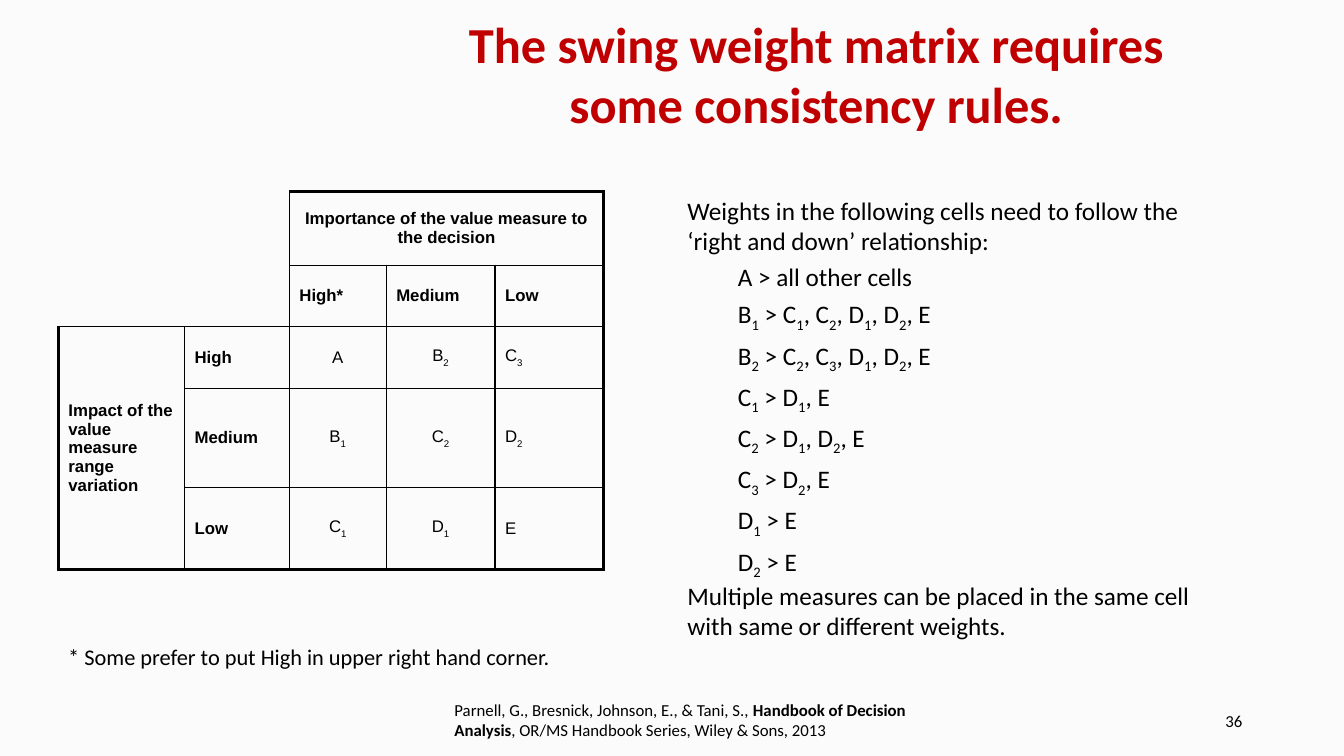
from dataclasses import dataclass

from lxml import etree
from pptx import Presentation, util as u
from pptx.dml.color import RGBColor
from pptx.enum import text as t
from pptx.oxml import ns

LEFT, MID, RIGHT = t.PP_ALIGN.LEFT, t.PP_ALIGN.CENTER, t.PP_ALIGN.RIGHT
TOP, CORE, BASE = t.MSO_ANCHOR.TOP, t.MSO_ANCHOR.MIDDLE, t.MSO_ANCHOR.BOTTOM


@dataclass(frozen=True)
class Theme:
    back: str = "FBFBFB"
    ink: str = "000000"
    red: str = "C00000"
    font: str = "Calibri"
    grid: str = "Arial"
    head: float = 36
    body: float = 18
    note: float = 16
    small: float = 12
    thin: float = 1
    thick: float = 2.25


THEME = Theme()


@dataclass(frozen=True)
class Box:
    left: float
    top: float
    width: float
    height: float
    lines: tuple[str, ...]
    size: float
    color: str = THEME.ink
    bold: bool = False
    align: t.PP_ALIGN = LEFT
    anchor: t.MSO_ANCHOR = TOP
    grow: bool = False
    wrap: bool = True
    foot: float = 0.13


RULES = (
    "Weights in the following cells need to follow the ‘right and down’ relationship:",
    "\tA > all other cells",
    "\tB_1 > C_1, C_2, D_1, D_2, E",
    "\tB_2 > C_2, C_3, D_1, D_2, E",
    "\tC_1 > D_1, E",
    "\tC_2 > D_1, D_2, E",
    "\tC_3 > D_2, E",
    "\tD_1 > E",
    "\tD_2 > E",
    "Multiple measures can be placed in the same cell with same or different weights.",
)

BOXES = (
    Box(23.93, 17.65, 7.62, 1.02, ("36",), THEME.small, align=RIGHT, anchor=CORE),
    Box(17.07, 5.18, 14.1, 11.48, RULES, THEME.body, anchor=CORE, grow=True, foot=0.9),
    Box(1.47, 16.08, 12.8, 0.94,
        ("* Some prefer to put High in upper right hand corner.",),
        THEME.note, grow=True, wrap=False),
    Box(11.07, 0.58, 19, 2.92,
        ("The swing weight matrix requires some consistency rules.",),
        THEME.head, THEME.red, True, MID, BASE),
    Box(11.2, 17.5, 12.9, 1.27,
        ("Parnell, G., Bresnick, Johnson, E., & Tani, S., "
         "**Handbook of Decision Analysis**, OR/MS Handbook Series, Wiley & Sons, 2013",),
        THEME.small, grow=True),
)

COLS = (3.18, 2.64, 2.44, 2.74, 2.74)
ROWS = (1.85, 1.55, 1.55, 2.51, 2.06)
CELLS = (
    ("", "", "Importance of the value measure to the decision", "", ""),
    ("", "", "High*", "Medium", "Low"),
    ("Impact of the value measure range variation", "High", "A", "B_2", "C_3"),
    ("", "Medium", "B_1", "C_2", "D_2"),
    ("", "Low", "C_1", "D_1", "E"),
)
SIDES = {"lnL": (0, -1), "lnR": (0, 1), "lnT": (-1, 0), "lnB": (1, 0)}


def write(para, line: str, size: float, name: str, color: str,
          bold: bool, sub: str = "-25000") -> None:
    """Fill a paragraph; _ lowers the next character, ** switches bold on and off."""
    for i, part in enumerate(line.split("**")):
        for j, bit in enumerate(part.split("_")):
            for k, piece in enumerate((bit[:1], bit[1:]) if j else (bit,)):
                if not piece:
                    continue
                run = para.add_run()
                run.text = piece
                if i % 2:
                    run.font.bold = True
                if j and k == 0:
                    run.font._element.set("baseline", sub)
    font = para.font
    font.size, font.name, font.bold = u.Pt(size), name, bold
    font.color.rgb = RGBColor.from_string(color)


def add_box(slide, box: Box) -> None:
    shape = slide.shapes.add_textbox(
        *map(u.Cm, (box.left, box.top, box.width, box.height)))
    frame = shape.text_frame
    frame.word_wrap = box.wrap
    frame.auto_size = (t.MSO_AUTO_SIZE.SHAPE_TO_FIT_TEXT if box.grow
                       else t.MSO_AUTO_SIZE.NONE)
    frame.vertical_anchor = box.anchor
    frame.margin_bottom = u.Cm(box.foot)
    for i, line in enumerate(box.lines):
        para = frame.add_paragraph() if i else frame.paragraphs[0]
        para.alignment = box.align
        if line.startswith("\t"):
            para.line_spacing = 1.2
        write(para, line, box.size, THEME.font, box.color, box.bold)


def zone(row: int, col: int):
    """Name the merged area, blank corner or single cell at a grid place."""
    if not (0 <= row < len(ROWS) and 0 <= col < len(COLS)):
        return "out"
    if row < 2 and col < 2:
        return "blank"
    if row == 0:
        return "top"
    return "side" if col == 0 else (row, col)


def weigh(row: int, col: int, down: int, right: int) -> float:
    """Line width on one side of a cell's zone, zero for none."""
    here = zone(row, col)
    next_to = zone(row + down, col + right)
    while here == next_to and here != "blank":
        row, col = row + down, col + right
        next_to = zone(row + down, col + right)
    if here == "blank" and next_to in ("blank", "out"):
        return 0
    return THEME.thick if next_to == "out" else THEME.thin


def add_edge(cell, tag: str, width: float) -> None:
    line = etree.SubElement(cell._tc.get_or_add_tcPr(), ns.qn(f"a:{tag}"))
    if not width:
        etree.SubElement(line, ns.qn("a:noFill"))
        return
    line.set("w", str(u.Pt(width)))
    fill = etree.SubElement(line, ns.qn("a:solidFill"))
    etree.SubElement(fill, ns.qn("a:srgbClr")).set("val", THEME.ink)


def add_matrix(slide) -> None:
    table = slide.shapes.add_table(
        len(ROWS), len(COLS), u.Cm(1.47), u.Cm(4.83),
        u.Cm(sum(COLS)), u.Cm(sum(ROWS))).table
    table.first_row = table.horz_banding = False
    for col, width in zip(table.columns, COLS):
        col.width = u.Cm(width)
    for row, height in zip(table.rows, ROWS):
        row.height = u.Cm(height)
    for r, line in enumerate(CELLS):
        for c, words in enumerate(line):
            cell = table.cell(r, c)
            for tag, step in SIDES.items():
                add_edge(cell, tag, weigh(r, c, *step))
            cell.fill.background()
            cell.vertical_anchor = CORE
            para = cell.text_frame.paragraphs[0]
            grade = r > 1 and c > 1
            para.alignment = MID if r == 0 or (grade and c < 4) else LEFT
            write(para, words, THEME.small, THEME.grid, THEME.ink, not grade, "-30000")
    table.cell(0, 2).merge(table.cell(0, 4))
    table.cell(2, 0).merge(table.cell(4, 0))


def main() -> None:
    deck = Presentation()
    deck.slide_width, deck.slide_height = u.Cm(33.86), u.Cm(19.05)
    slide = deck.slides.add_slide(deck.slide_layouts[6])
    fill = slide.background.fill
    fill.solid()
    fill.fore_color.rgb = RGBColor.from_string(THEME.back)
    add_matrix(slide)
    for box in BOXES:
        add_box(slide, box)
    deck.save("out.pptx")


if __name__ == "__main__":
    main()
